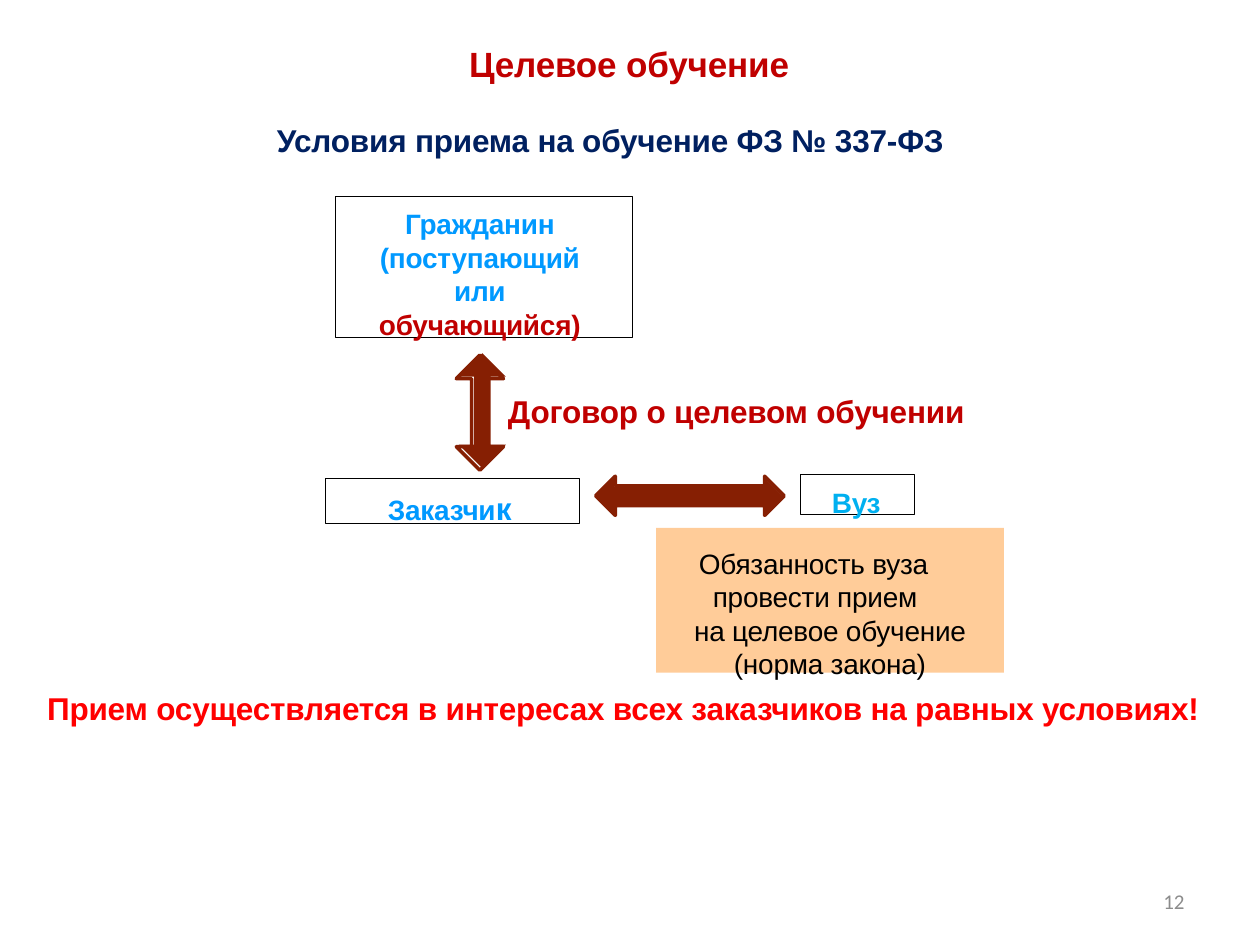
import pptx
import pptx.util
import pptx.dml.color
import pptx.enum.shapes
import pptx.enum.text

Cm = pptx.util.Cm
Pt = pptx.util.Pt
RGB = pptx.dml.color.RGBColor
SHAPES = pptx.enum.shapes.MSO_SHAPE
ALIGN = pptx.enum.text.PP_ALIGN
ANCHOR = pptx.enum.text.MSO_ANCHOR

CRIMSON = RGB(0xC0, 0x00, 0x00)
NAVY = RGB(0x00, 0x20, 0x60)
AZURE = RGB(0x00, 0x99, 0xFF)
SKY = RGB(0x00, 0xB0, 0xF0)
BROWN = RGB(0x86, 0x1F, 0x03)
PEACH = RGB(0xFF, 0xCC, 0x99)
RED = RGB(0xFF, 0x00, 0x00)
GRAY = RGB(0x8C, 0x8C, 0x8C)
WHITE = RGB(0xFF, 0xFF, 0xFF)
BLACK = RGB(0x00, 0x00, 0x00)


def add_text(paragraph, text, size=16, color=BLACK, bold=False, font="Arial", spacing=-10):
    run = paragraph.add_run()
    run.text = text
    run.font.name = font
    run.font.size = Pt(size)
    run.font.bold = bold
    run.font.color.rgb = color
    run.font._element.set("spc", str(spacing))


def add_line(frame, text, first=True, align=ALIGN.LEFT, indent=0, **style):
    paragraph = frame.paragraphs[0] if first else frame.add_paragraph()
    paragraph._p.get_or_add_pPr().set("marL", str(Cm(indent)))
    paragraph.alignment = align
    add_text(paragraph, text, **style)
    return paragraph


def set_frame(frame, top=0.06, left=0, right=0, anchor=ANCHOR.TOP):
    frame.word_wrap = True
    frame.vertical_anchor = anchor
    frame.margin_left, frame.margin_right = Cm(left), Cm(right)
    frame.margin_top, frame.margin_bottom = Cm(top), 0
    return frame


def add_label(slide, box, **margins):
    label = slide.shapes.add_textbox(*map(Cm, box))
    return set_frame(label.text_frame, **margins)


def add_block(slide, kind, box, fill=None, line=None, line_width=0.25):
    block = slide.shapes.add_shape(kind, *map(Cm, box))
    block.shadow.inherit = False
    if fill is None:
        block.fill.background()
    else:
        block.fill.solid()
        block.fill.fore_color.rgb = fill
    if line is None:
        block.line.fill.background()
    else:
        block.line.color.rgb = line
        block.line.width = Pt(line_width)
    return block


def add_double_arrow(slide, kind, box, head, shift):
    left, top, width, height = box
    outline_box = (left + shift[0], top + shift[1], width, height)
    for place, paint in (
        (box, {"fill": BROWN}),
        (outline_box, {"line": BROWN, "line_width": 2.04}),
    ):
        arrow = add_block(slide, kind, place, **paint)
        arrow.adjustments[0] = 0.5
        arrow.adjustments[1] = head


def add_heading(slide, left, top, width):
    title = add_label(slide, (left + 3.28, top, width - 5.58, 0.89), anchor=ANCHOR.MIDDLE)
    add_line(title, "Целевое обучение", align=ALIGN.CENTER, size=20, color=CRIMSON, bold=True)
    terms = add_label(slide, (left, top + 1.58, width, 1.85))
    add_line(terms, "Условия приема на обучение ФЗ № 337-ФЗ", indent=5,
             size=18, color=NAVY, bold=True)


def add_scheme(slide, left, top):
    contract = add_label(slide, (left + 3.66, top + 3.89, 9.53, 0.81))
    add_line(contract, "Договор о целевом обучении", indent=0.03,
             size=18, color=CRIMSON, bold=True)

    university = add_block(slide, SHAPES.RECTANGLE, (left + 9.58, top + 5.61, 2.31, 0.79), line=BLACK)
    add_line(set_frame(university.text_frame, top=0.21), "Вуз", indent=0.64, color=SKY, bold=True)

    customer = add_block(slide, SHAPES.RECTANGLE, (left, top + 5.69, 5.13, 0.89), line=BLACK)
    customer_line = add_line(set_frame(customer.text_frame, top=0.21), "Заказчи",
                             indent=1.27, color=AZURE, bold=True)
    add_text(customer_line, "к", size=18, color=AZURE, bold=True)

    citizen = add_block(slide, SHAPES.RECTANGLE, (left + 0.2, top, 5.99, 2.84), fill=WHITE, line=BLACK)
    citizen_frame = set_frame(citizen.text_frame, top=0.21, left=0.7, right=0.84)
    add_line(citizen_frame, "Гражданин (поступающий или", align=ALIGN.CENTER, color=AZURE, bold=True)
    add_line(citizen_frame, "обучающийся)", first=False, align=ALIGN.CENTER, color=CRIMSON, bold=True)

    add_double_arrow(slide, SHAPES.UP_DOWN_ARROW, (left + 2.7, top + 3.16, 0.95, 2.32),
                     head=0.35, shift=(-0.05, 0.04))
    add_double_arrow(slide, SHAPES.LEFT_RIGHT_ARROW, (left + 5.44, top + 5.66, 3.8, 0.79),
                     head=0.5, shift=(0.02, -0.02))

    duty = add_block(slide, SHAPES.RECTANGLE, (left + 6.68, top + 6.68, 7.01, 2.92), fill=PEACH)
    duty_frame = set_frame(duty.text_frame, top=0.37)
    add_line(duty_frame, "Обязанность вуза", indent=0.86)
    add_line(duty_frame, "провести прием", first=False, indent=1.14)
    add_line(duty_frame, "на целевое обучение (норма закона)", first=False, align=ALIGN.CENTER)


def add_conclusion(slide, left, top, width):
    conclusion = add_label(slide, (left, top, width, 1.02), top=0.16)
    add_line(conclusion, "Прием осуществляется в интересах всех заказчиков на равных условиях!",
             indent=0.9, size=18, color=RED, bold=True)


def add_page_number(slide, left, top):
    number = add_label(slide, (left, top, 5.92, 1.02), top=0, right=0.25, anchor=ANCHOR.MIDDLE)
    add_line(number, "12", align=ALIGN.RIGHT, size=12, color=GRAY, font="Calibri", spacing=0)


def main():
    deck = pptx.Presentation()
    deck.slide_width, deck.slide_height = Cm(25.4), Cm(19.05)
    slide = deck.slides.add_slide(deck.slide_layouts[6])
    add_heading(slide, 0.58, 0.81, 23.22)
    add_scheme(slide, 6.55, 3.96)
    add_conclusion(slide, 0.05, 13.74, 25.35)
    add_page_number(slide, 18.21, 17.65)
    deck.save("out.pptx")


if __name__ == "__main__":
    main()
